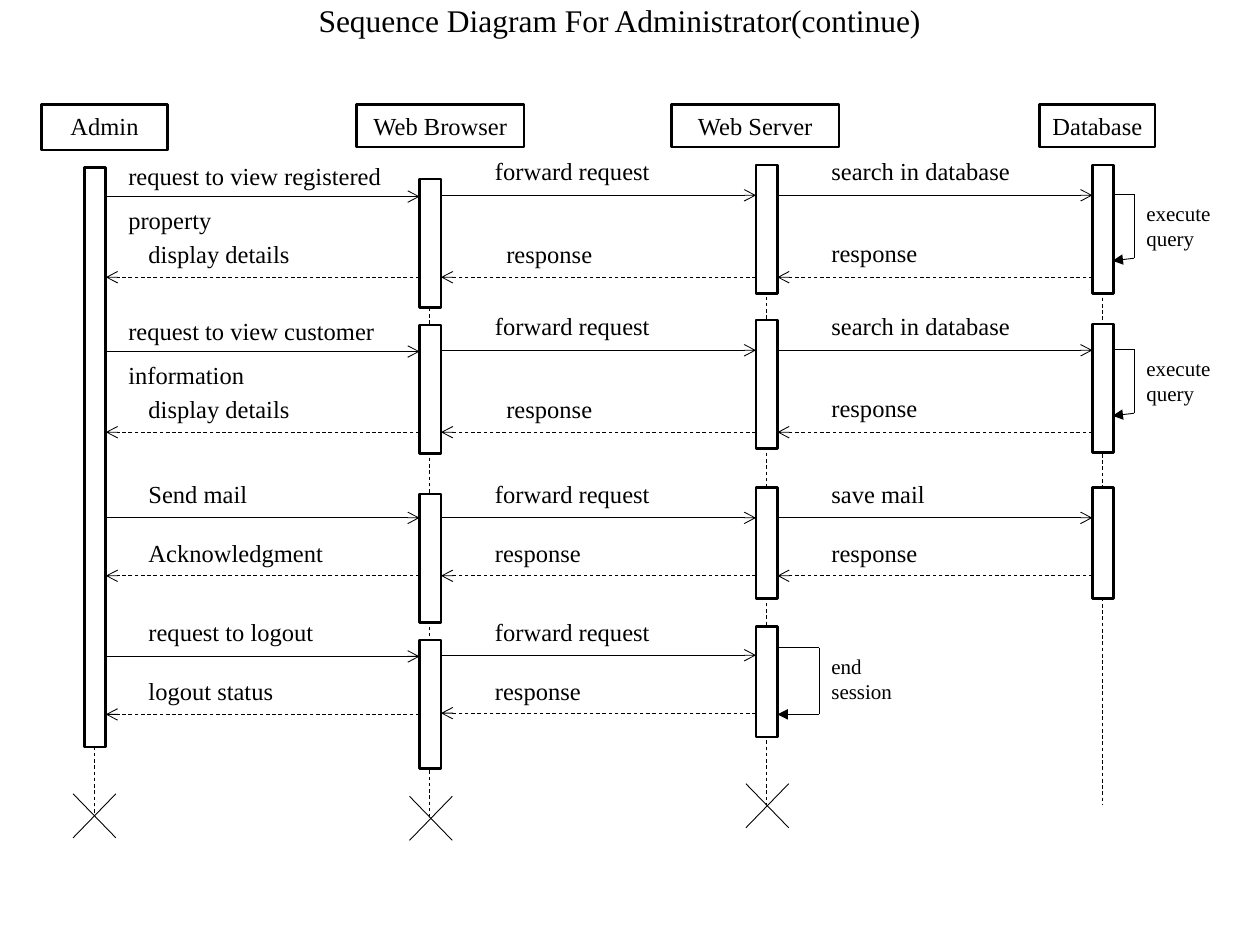
from lxml.etree import SubElement
from pptx import Presentation
from pptx.dml.color import RGBColor
from pptx.enum.dml import MSO_LINE
from pptx.enum.shapes import MSO_CONNECTOR, MSO_SHAPE
from pptx.enum.text import MSO_ANCHOR, PP_ALIGN
from pptx.oxml.ns import qn
from pptx.util import Inches, Pt

COLORS = {"ink": "000000", "bar": "FFFFFF"}
INK = RGBColor.from_string(COLORS["ink"])
BAR_W = 0.17

prs = Presentation()
prs.slide_width, prs.slide_height = Inches(10), Inches(7.5)
s = prs.slides.add_slide(prs.slide_layouts[6])


def write(sp, text, size=14, align=PP_ALIGN.LEFT, spacing=1.0, anchor=MSO_ANCHOR.TOP):
    tf = sp.text_frame
    tf.word_wrap = True
    tf.vertical_anchor = anchor
    p = tf.paragraphs[0]
    p.alignment, p.line_spacing = align, spacing
    r = p.add_run()
    r.text = text
    for name, value in {"name": "Times New Roman", "size": Pt(size)}.items():
        setattr(r.font, name, value)
    r.font.color.rgb = INK


def line(x1, y1, x2, y2, dash=False, **ends):
    c = s.shapes.add_connector(MSO_CONNECTOR.STRAIGHT, *map(Inches, (x1, y1, x2, y2)))
    c.line.color.rgb = INK
    c.line.width = Pt(0.5)
    if dash:
        c.line.dash_style = MSO_LINE.DASH
    ln = c.line._get_or_add_ln()
    for end, kind in ends.items():
        SubElement(ln, qn(f"a:{end}"), type=kind)
    SubElement(c._element.spPr, qn("a:effectLst"))


title = s.shapes.add_textbox(*map(Inches, (0.42, 0, 9, 0.35)))
write(title, "Sequence Diagram For Administrator(continue)", 18, PP_ALIGN.CENTER, 0.9, MSO_ANCHOR.MIDDLE)

lifelines = [
    ("Admin", 0.33, 1, 0.36, 0.67, 1.56, 6.48, [(1.33, 4.6)]),
    ("Web Browser", 2.83, 1.33, 0.34, 3.33, 1.65, 6.48, [(1.42, 1.02), (2.58, 1.02), (3.92, 1.02), (5.08, 1.02)]),
    ("Web Server", 5.33, 1.33, 0.34, 6, 1.56, 6.39, [(1.31, 1.02), (2.54, 1.02), (3.87, 0.88), (4.97, 0.88)]),
    ("Database", 8.25, 0.92, 0.34, 8.67, 1.47, 6.39, [(1.31, 1.02), (2.57, 1.02), (3.87, 0.88)]),
]
bar_x = [lifeline[4] for lifeline in lifelines]
for name, x, w, h, bar, top, bottom, bars in lifelines:
    line(bar + 0.08, top, bar + 0.08, bottom, dash=True)
    sp = s.shapes.add_shape(MSO_SHAPE.RECTANGLE, *map(Inches, (x, 0.83, w, h)))
    sp.shadow.inherit = False
    sp.fill.background()
    sp.line.color.rgb = INK
    sp.line.width = Pt(1.25)
    write(sp, name, align=PP_ALIGN.CENTER)
    for y, height in bars:
        sp = s.shapes.add_shape(MSO_SHAPE.RECTANGLE, *map(Inches, (bar, y, BAR_W, height)))
        sp.shadow.inherit = False
        sp.fill.solid()
        sp.fill.fore_color.rgb = RGBColor.from_string(COLORS["bar"])
        sp.line.color.rgb = INK
        sp.line.width = Pt(1.5)

requests = [
    (0, 1.56, "request to view registered property", 0.92, 1.11),
    (1, 1.55, "forward request", 3.83, 1.19),
    (2, 1.55, "search in database", 6.5, 1.19),
    (0, 2.79, "request to view customer information", 0.92, 2.34),
    (1, 2.78, "forward request", 3.83, 2.42),
    (2, 2.78, "search in database", 6.5, 2.42),
    (0, 4.11, "Send mail", 1.08, 3.75),
    (1, 4.11, "forward request", 3.83, 3.75),
    (2, 4.11, "save mail", 6.5, 3.75),
    (0, 5.21, "request to logout", 1.08, 4.85),
    (1, 5.2, "forward request", 3.83, 4.85),
]
replies = [
    (0, 2.2, "display details", 1.08, 1.85),
    (1, 2.2, "response", 3.92, 1.85),
    (2, 2.2, "response", 6.5, 1.84),
    (0, 3.43, "display details", 1.08, 3.08),
    (1, 3.43, "response", 3.92, 3.08),
    (2, 3.43, "response", 6.5, 3.07),
    (0, 4.57, "Acknowledgment", 1.08, 4.22),
    (1, 4.57, "response", 3.83, 4.22),
    (2, 4.57, "response", 6.5, 4.22),
    (0, 5.67, "logout status", 1.08, 5.32),
    (1, 5.66, "response", 3.83, 5.32),
]
for messages, is_reply in ((requests, False), (replies, True)):
    for lane, y, text, x, top in messages:
        start, end = bar_x[lane] + BAR_W, bar_x[lane + 1]
        if is_reply:
            start, end = end, start
        line(start, y, end, y, dash=is_reply, tailEnd="arrow")
        tall = text.startswith("request to view")
        w, h, spacing = (2.83, 0.88, 1.5) if tall else (1.75, 0.36, 1.0)
        write(s.shapes.add_textbox(*map(Inches, (x, top, w, h))), text, spacing=spacing)

self_calls = [
    ("execute query", 8.83, 9, 1.54, 2.05, 2.07),
    ("execute query", 8.83, 9, 2.77, 3.28, 3.3),
    ("end session", 6.17, 6.5, 5.14, 5.67, 5.67),
]
for text, left, right, top, bottom, tip in self_calls:
    line(left, top, right, top)
    line(right, top, right, bottom)
    line(left, tip, right, bottom, headEnd="triangle")
    write(s.shapes.add_textbox(*map(Inches, (right, top, 0.75, 0.53))), text, 12)

for x, y in ((0.58, 6.3), (3.25, 6.32), (5.92, 6.22)):
    line(x, y, x + 0.34, y + 0.35)
    line(x, y + 0.35, x + 0.34, y)

prs.save("out.pptx")
